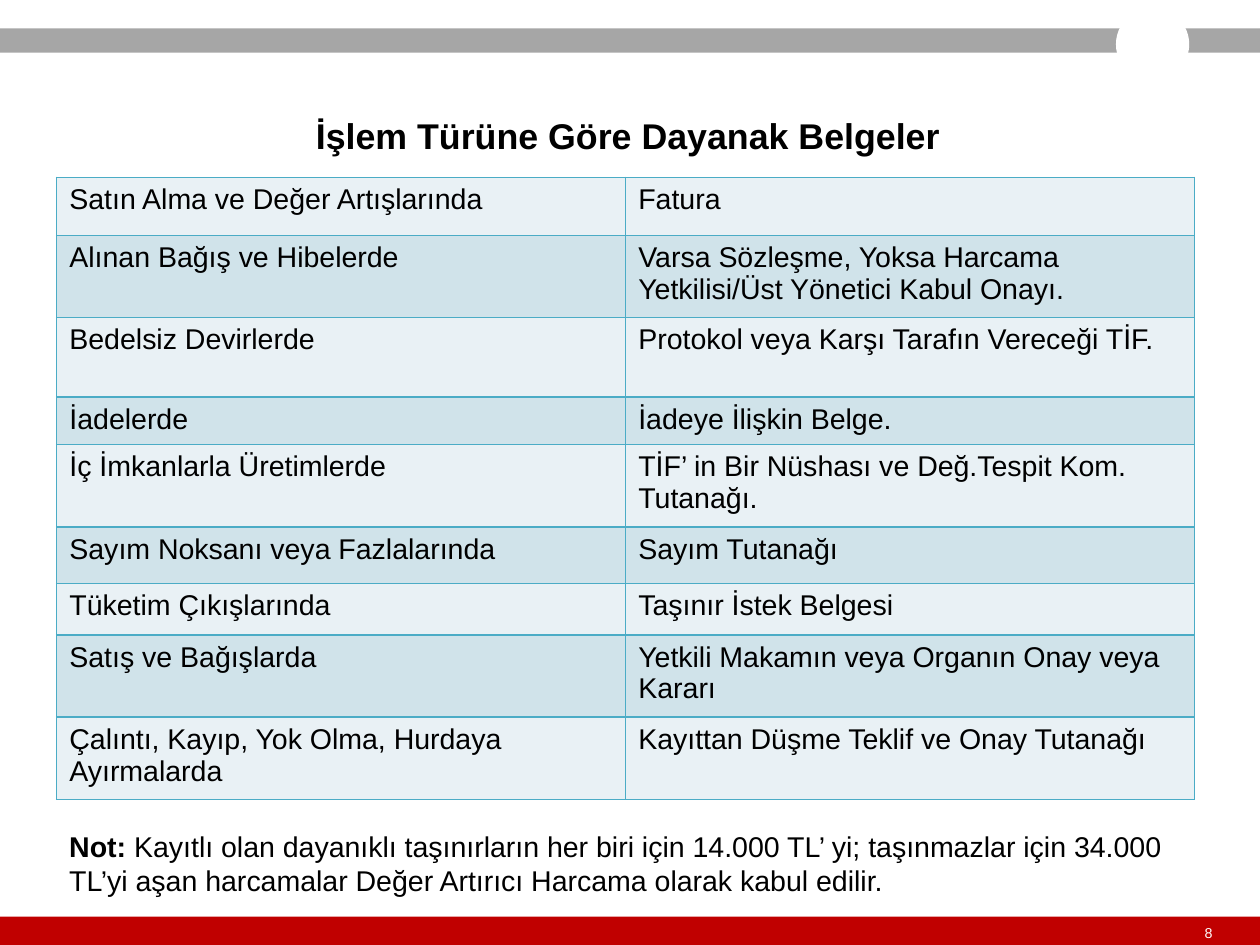
import pptx
import pptx.util
import pptx.dml.color
import pptx.enum.shapes
import pptx.enum.text
import pptx.oxml
import pptx.oxml.ns

RGB = pptx.dml.color.RGBColor
Inches = pptx.util.Inches
SHAPE = pptx.enum.shapes.MSO_SHAPE
ANCHOR = pptx.enum.text.MSO_ANCHOR
ALIGN = pptx.enum.text.PP_ALIGN

BLACK = RGB(0x00, 0x00, 0x00)
WHITE = RGB(0xFF, 0xFF, 0xFF)
RED = RGB(0xC0, 0x00, 0x00)
GRAY = RGB(0xA6, 0xA6, 0xA6)
BORDER = RGB(0x4B, 0xAC, 0xC6)
ROW_FILLS = (RGB(0xE9, 0xF1, 0xF5), RGB(0xD0, 0xE3, 0xEA))

WIDTH, HEIGHT = 9.8, 7.35
MARGIN = 0.44
CONTENT_WIDTH = 8.85

# Row height, transaction type, supporting document
DOCUMENTS = [
    (0.45, "Satın Alma ve Değer Artışlarında", "Fatura"),
    (0.64, "Alınan Bağış ve Hibelerde",
     "Varsa Sözleşme, Yoksa Harcama Yetkilisi/Üst Yönetici Kabul Onayı."),
    (0.62, "Bedelsiz Devirlerde", "Protokol veya Karşı Tarafın Vereceği TİF."),
    (0.37, "İadelerde", "İadeye İlişkin Belge."),
    (0.64, "İç İmkanlarla Üretimlerde",
     "TİF’ in Bir Nüshası ve Değ.Tespit Kom. Tutanağı."),
    (0.44, "Sayım Noksanı veya Fazlalarında", "Sayım Tutanağı"),
    (0.4, "Tüketim Çıkışlarında", "Taşınır İstek Belgesi"),
    (0.64, "Satış ve Bağışlarda", "Yetkili Makamın veya Organın Onay veya Kararı"),
    (0.64, "Çalıntı, Kayıp, Yok Olma, Hurdaya Ayırmalarda",
     "Kayıttan Düşme Teklif ve Onay Tutanağı"),
]


def box(left, top, width, height):
    return [Inches(v) for v in (left, top, width, height)]


def add_run(p, text, size=16, color=BLACK, bold=False):
    r = p.add_run()
    r.text = text
    r.font.name = "Arial"
    r.font.size = pptx.util.Pt(size)
    r.font.bold = bold
    r.font.color.rgb = color


def add_block(s, kind, color, *place):
    sp = s.shapes.add_shape(kind, *box(*place))
    sp.shadow.inherit = False
    sp.fill.solid()
    sp.fill.fore_color.rgb = color
    sp.line.fill.background()


def add_text(s, place, inset=None, wrap=True):
    tf = s.shapes.add_textbox(*box(*place)).text_frame
    tf.word_wrap = wrap
    if inset is not None:
        set_inset(tf, inset)
    return tf


def set_inset(tf, inset):
    tf.margin_left = tf.margin_right = Inches(inset)
    tf.margin_top = tf.margin_bottom = Inches(inset)


def set_title(s, text):
    sp = s.shapes.title
    sp.left, sp.top, sp.width, sp.height = box(1.69, 0.74, 6.39, 0.46)
    tf = sp.text_frame
    tf.auto_size = pptx.enum.text.MSO_AUTO_SIZE.NONE
    tf.vertical_anchor = ANCHOR.MIDDLE
    set_inset(tf, 0.08)
    p = tf.paragraphs[0]
    p.alignment = ALIGN.CENTER
    p.line_spacing = 1.5
    add_run(p, text, size=20, bold=True)


def set_borders(cell):
    tc_pr = cell._tc.get_or_add_tcPr()
    for i, side in enumerate(("lnL", "lnR", "lnT", "lnB")):
        tc_pr.insert(i, pptx.oxml.parse_xml(
            f'<a:{side} {pptx.oxml.ns.nsdecls("a")} w="12700"><a:solidFill>'
            f'<a:srgbClr val="{BORDER}"/></a:solidFill></a:{side}>'))


def add_document_table(s):
    total = sum(row[0] for row in DOCUMENTS)
    table = s.shapes.add_table(
        len(DOCUMENTS), 2, *box(MARGIN, 1.38, CONTENT_WIDTH, total)).table
    table.first_row = table.horz_banding = False
    for i, (height, *texts) in enumerate(DOCUMENTS):
        table.rows[i].height = Inches(height)
        for j, text in enumerate(texts):
            cell = table.cell(i, j)
            cell.fill.solid()
            cell.fill.fore_color.rgb = ROW_FILLS[i % 2]
            set_borders(cell)
            add_run(cell.text_frame.paragraphs[0], text)


def main():
    prs = pptx.Presentation()
    prs.slide_width, prs.slide_height = Inches(WIDTH), Inches(HEIGHT)
    s = prs.slides.add_slide(prs.slide_layouts[5])

    # Header band with its round notch, and footer band
    add_block(s, SHAPE.RECTANGLE, GRAY, 0, 0.22, WIDTH, 0.19)
    add_block(s, SHAPE.OVAL, WHITE, 8.68, 0.06, 0.57, 0.57)
    add_block(s, SHAPE.RECTANGLE, RED, 0, HEIGHT - 0.22, WIDTH, 0.22)

    # Page number
    tf = add_text(s, (9.37, 7.19, 0.14, 0.13), inset=0, wrap=False)
    tf.vertical_anchor = ANCHOR.MIDDLE
    add_run(tf.paragraphs[0], "8", size=8, color=WHITE)

    # Title and table
    set_title(s, "İşlem Türüne Göre Dayanak Belgeler")
    add_document_table(s)

    # Note
    p = add_text(s, (MARGIN, 6.4, CONTENT_WIDTH, 0.64)).paragraphs[0]
    add_run(p, "Not: ", bold=True)
    add_run(p, "Kayıtlı olan dayanıklı taşınırların her biri için 14.000 TL’ yi; "
               "taşınmazlar için 34.000 TL’yi aşan harcamalar Değer Artırıcı "
               "Harcama olarak kabul edilir.")

    prs.save("out.pptx")


if __name__ == "__main__":
    main()
